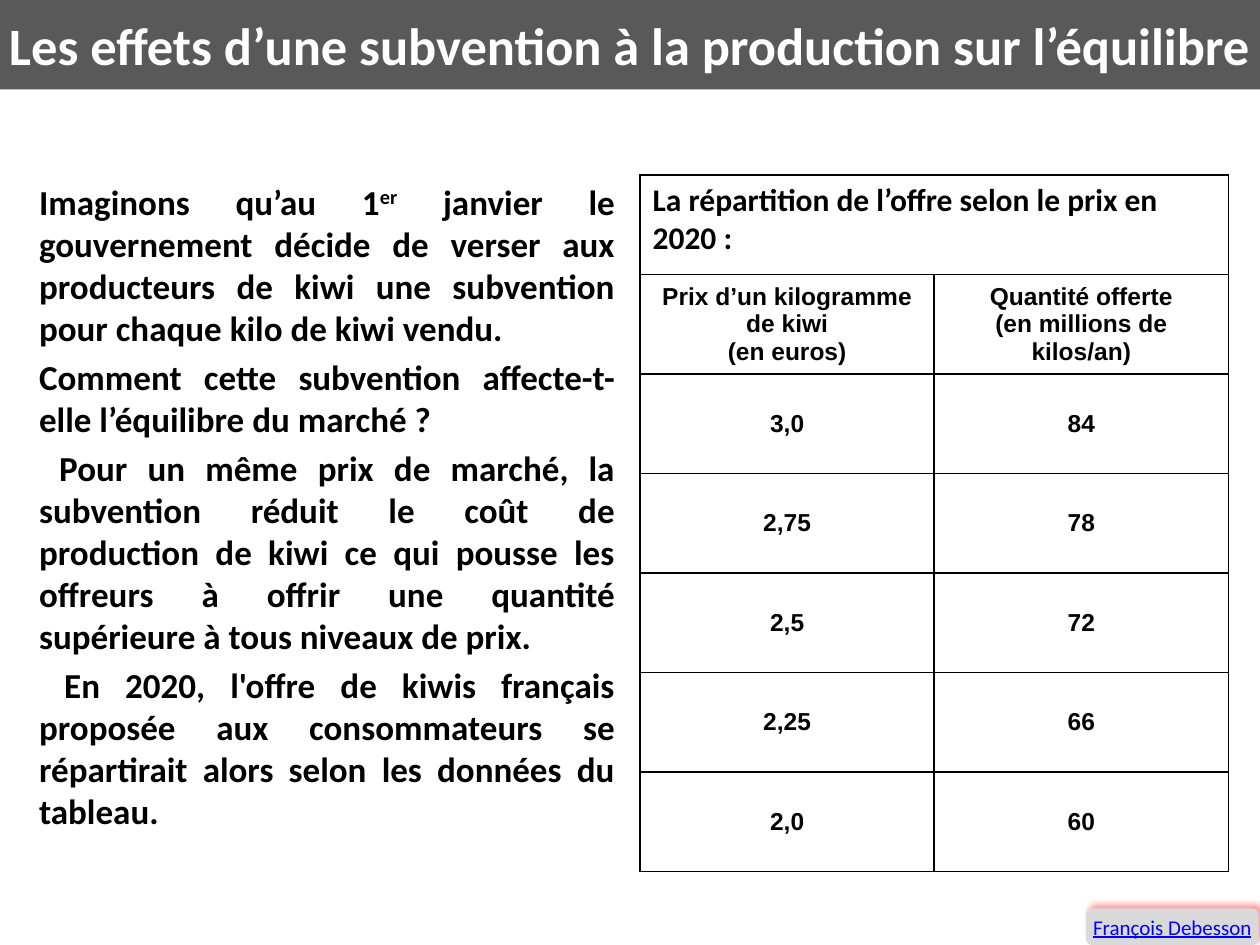
import dataclasses

import lxml.etree
import pptx
import pptx.dml.color
import pptx.enum.shapes
import pptx.enum.text
import pptx.oxml
import pptx.oxml.ns
import pptx.util

WIDTH, HEIGHT = 10, 7.5
ALIGN = pptx.enum.text.PP_ALIGN
ANCHOR = pptx.enum.text.MSO_ANCHOR
Inches = pptx.util.Inches


@dataclasses.dataclass(frozen=True)
class Style:
    font: str
    size: float
    color: str = "000000"
    align: int = ALIGN.CENTER
    bold: bool = True
    underline: bool = False
    space_before: float = 0


@dataclasses.dataclass(frozen=True)
class Run:
    text: str
    superscript: bool = False


TITLE = Style("Calibri", 30, "FFFFFF")
BODY = Style("Calibri", 20, align=ALIGN.JUSTIFY, space_before=4)
CAPTION = Style("Calibri", 18, align=ALIGN.LEFT)
CELL = Style("Arial", 14)
BADGE = Style("Calibri", 12, "0000FF", bold=False, underline=True)

EXPLANATION = [
    [Run("Imaginons qu’au 1"), Run("er", superscript=True),
     Run(" janvier le gouvernement décide de verser aux producteurs de kiwi "
         "une subvention pour chaque kilo de kiwi vendu.")],
    [Run("Comment cette subvention affecte-t-elle l’équilibre du marché ?")],
    [Run(" Pour un même prix de marché, la subvention réduit le coût de "
         "production de kiwi ce qui pousse les offreurs à offrir une quantité "
         "supérieure à tous niveaux de prix.")],
    [Run(" En 2020, l'offre de kiwis français proposée aux consommateurs se "
         "répartirait alors selon les données du tableau.")],
]
SUPPLY_CAPTION = "La répartition de l’offre selon le prix en 2020 :"
SUPPLY = [
    (["Prix d’un kilogramme de kiwi", "(en euros)"],
     ["Quantité offerte", "(en millions de kilos/an)"]),
    (["3,0"], ["84"]),
    (["2,75"], ["78"]),
    (["2,5"], ["72"]),
    (["2,25"], ["66"]),
    (["2,0"], ["60"]),
]


def rgb(color: str) -> pptx.dml.color.RGBColor:
    return pptx.dml.color.RGBColor.from_string(color)


def fill_solid(target, color: str) -> None:
    target.fill.solid()
    target.fill.fore_color.rgb = rgb(color)


def set_margins(target, horizontal: float, vertical: float) -> None:
    target.margin_left = target.margin_right = Inches(horizontal)
    target.margin_top = target.margin_bottom = Inches(vertical)


def write(frame, paragraphs: list[list[Run]], style: Style) -> None:
    """Fill a text frame, one list of runs per paragraph."""
    frame.word_wrap = True
    for index, runs in enumerate(paragraphs):
        paragraph = frame.add_paragraph() if index else frame.paragraphs[0]
        paragraph.alignment = style.align
        paragraph.space_before = pptx.util.Pt(style.space_before)
        for item in runs:
            run = paragraph.add_run()
            run.text = item.text
            font = run.font
            font.name, font.size = style.font, pptx.util.Pt(style.size)
            font.bold, font.underline = style.bold, style.underline
            font.color.rgb = rgb(style.color)
            if item.superscript:
                font._element.set("baseline", "30000")


def add_borders(cell, color: str, width: float) -> None:
    properties = cell._tc.get_or_add_tcPr()
    for side in ("lnL", "lnR", "lnT", "lnB"):
        properties.append(pptx.oxml.parse_xml(
            f'<a:{side} {pptx.oxml.ns.nsdecls("a")} w="{pptx.util.Pt(width)}">'
            f'<a:solidFill><a:srgbClr val="{color}"/></a:solidFill></a:{side}>'))


def add_glow_shadow(shape, color: str) -> None:
    shape.shadow.inherit = False
    effects = shape._element.spPr.find(pptx.oxml.ns.qn("a:effectLst"))
    shadow = lxml.etree.SubElement(
        effects, pptx.oxml.ns.qn("a:outerShdw"), blurRad=str(pptx.util.Pt(4)),
        dist=str(pptx.util.Pt(3)), dir=str(315 * 60000), rotWithShape="0")
    tint = lxml.etree.SubElement(shadow, pptx.oxml.ns.qn("a:srgbClr"), val=color)
    lxml.etree.SubElement(tint, pptx.oxml.ns.qn("a:alpha"), val="40000")


def add_title(slide) -> None:
    title = slide.shapes.title
    title.left = title.top = 0
    title.width, title.height = Inches(WIDTH), Inches(0.71)
    fill_solid(title, "595959")
    frame = title.text_frame
    frame.auto_size = pptx.enum.text.MSO_AUTO_SIZE.NONE
    frame.vertical_anchor = ANCHOR.MIDDLE
    set_margins(frame, 0.04, 0.04)
    write(frame, [[Run("Les effets d’une subvention à la production sur l’équilibre")]],
          TITLE)


def add_explanation(slide) -> None:
    box = slide.shapes.add_textbox(
        Inches(0.27), Inches(1.39), Inches(4.65), Inches(5.33))
    set_margins(box.text_frame, 0.04, 0.04)
    write(box.text_frame, EXPLANATION, BODY)


def add_supply_table(slide) -> None:
    row_count = len(SUPPLY) + 1
    table = slide.shapes.add_table(
        row_count, 2, Inches(5.08), Inches(1.39),
        Inches(4.67), Inches(0.79 * row_count)).table
    table.first_row = table.horz_banding = False
    for cell in table.iter_cells():
        add_borders(cell, "000000", 1)
        fill_solid(cell, "FFFFFF")

    # Caption across both columns
    caption = table.cell(0, 0)
    caption.merge(table.cell(0, 1))
    write(caption.text_frame, [[Run(SUPPLY_CAPTION)]], CAPTION)

    # Headings and values
    for row, entries in enumerate(SUPPLY, start=1):
        for column, lines in enumerate(entries):
            cell = table.cell(row, column)
            cell.vertical_anchor = ANCHOR.MIDDLE
            set_margins(cell, 0.07, 0)
            write(cell.text_frame, [[Run(line)] for line in lines], CELL)


def add_author_badge(slide) -> None:
    width, height = 1.37, 0.29
    badge = slide.shapes.add_shape(
        pptx.enum.shapes.MSO_SHAPE.ROUNDED_RECTANGLE,
        Inches(WIDTH - width - 0.01), Inches(HEIGHT - height),
        Inches(width), Inches(height))
    fill_solid(badge, "D9D9D9")
    badge.line.fill.background()
    add_glow_shadow(badge, "FF0000")
    set_margins(badge.text_frame, 0, 0)
    badge.text_frame.vertical_anchor = ANCHOR.MIDDLE
    write(badge.text_frame, [[Run("François Debesson")]], BADGE)


def main() -> None:
    presentation = pptx.Presentation()
    presentation.slide_width = Inches(WIDTH)
    presentation.slide_height = Inches(HEIGHT)
    slide = presentation.slides.add_slide(presentation.slide_layouts[5])
    add_title(slide)
    add_explanation(slide)
    add_supply_table(slide)
    add_author_badge(slide)
    presentation.save("out.pptx")


if __name__ == "__main__":
    main()
